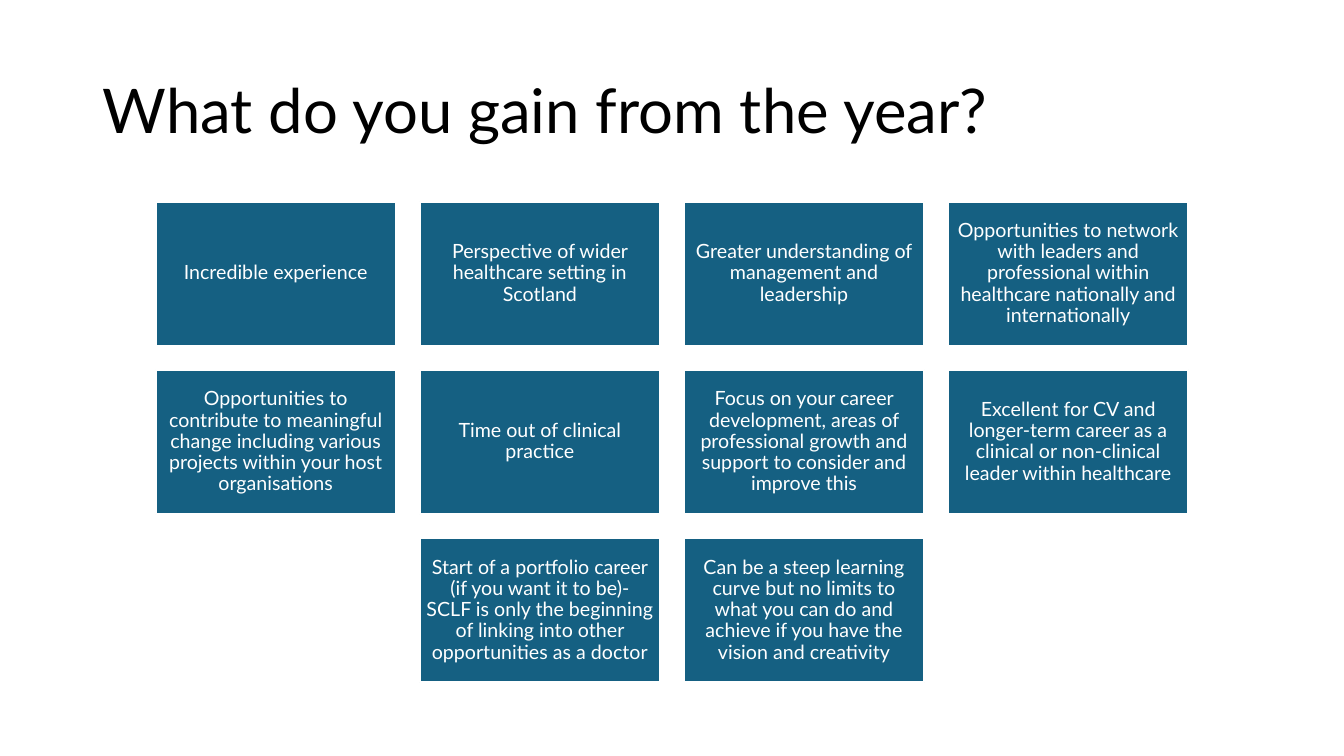
from dataclasses import dataclass

from pptx import Presentation
from pptx.dml.color import RGBColor
from pptx.enum.shapes import MSO_SHAPE as Shape
from pptx.enum.text import MSO_ANCHOR as Anchor, PP_ALIGN as Align
from pptx.util import Inches, Pt


@dataclass(frozen=True)
class Theme:
    font: str = "Lato"
    ink: RGBColor = RGBColor.from_string("000000")
    paper: RGBColor = RGBColor.from_string("FFFFFF")
    card: RGBColor = RGBColor.from_string("156082")
    title_size: int = 44
    card_size: int = 14
    border: float = 1.5
    leading: float = 0.9


@dataclass(frozen=True)
class Grid:
    columns: int = 4
    top: float = 2.0
    width: float = 2.38
    height: float = 1.43
    gap: float = 0.24


THEME = Theme()
GRID = Grid()
SLIDE_W, SLIDE_H = 13.33, 7.5
CARD_INSET = 0.06

GAINS = [
    "Incredible experience",
    "Perspective of wider healthcare setting in Scotland",
    "Greater understanding of management and leadership",
    "Opportunities to network with leaders and professional within "
    "healthcare nationally and internationally",
    "Opportunities to contribute to meaningful change including various "
    "projects within your host organisations",
    "Time out of clinical practice",
    "Focus on your career development, areas of professional growth and "
    "support to consider and improve this",
    "Excellent for CV and longer-term career as a clinical or non-clinical "
    "leader within healthcare",
    "Start of a portfolio career (if you want it to be)- SCLF is only the "
    "beginning of linking into other opportunities as a doctor",
    "Can be a steep learning curve but no limits to what you can do and "
    "achieve if you have the vision and creativity",
]


def set_text(s, text, size, color, align):
    tf = s.text_frame
    tf.word_wrap = True
    tf.vertical_anchor = Anchor.MIDDLE
    tf.text = text
    p = tf.paragraphs[0]
    p.alignment = align
    p.line_spacing = THEME.leading
    font = p.runs[0].font
    font.name = THEME.font
    font.size = Pt(size)
    font.color.rgb = color


def add_title(slide, text):
    s = slide.shapes.add_textbox(Inches(0.92), Inches(0.4), Inches(11.5), Inches(1.45))
    set_text(s, text, THEME.title_size, THEME.ink, Align.LEFT)


def add_card(slide, x, y, text):
    s = slide.shapes.add_shape(
        Shape.RECTANGLE, Inches(x), Inches(y), Inches(GRID.width), Inches(GRID.height)
    )
    s.shadow.inherit = False
    s.fill.solid()
    s.fill.fore_color.rgb = THEME.card
    s.line.color.rgb = THEME.paper
    s.line.width = Pt(THEME.border)
    tf = s.text_frame
    tf.margin_left = tf.margin_right = Inches(CARD_INSET)
    tf.margin_top = tf.margin_bottom = Inches(CARD_INSET)
    set_text(s, text, THEME.card_size, THEME.paper, Align.CENTER)


def add_centred_grid(slide, texts):
    for start in range(0, len(texts), GRID.columns):
        row = texts[start:start + GRID.columns]
        row_width = len(row) * (GRID.width + GRID.gap) - GRID.gap
        left = (SLIDE_W - row_width) / 2
        y = GRID.top + start // GRID.columns * (GRID.height + GRID.gap)
        for column, text in enumerate(row):
            add_card(slide, left + column * (GRID.width + GRID.gap), y, text)


def main():
    prs = Presentation()
    prs.slide_width, prs.slide_height = Inches(SLIDE_W), Inches(SLIDE_H)
    slide = prs.slides.add_slide(prs.slide_layouts[6])
    add_title(slide, "What do you gain from the year?")
    add_centred_grid(slide, GAINS)
    prs.save("out.pptx")


if __name__ == "__main__":
    main()
